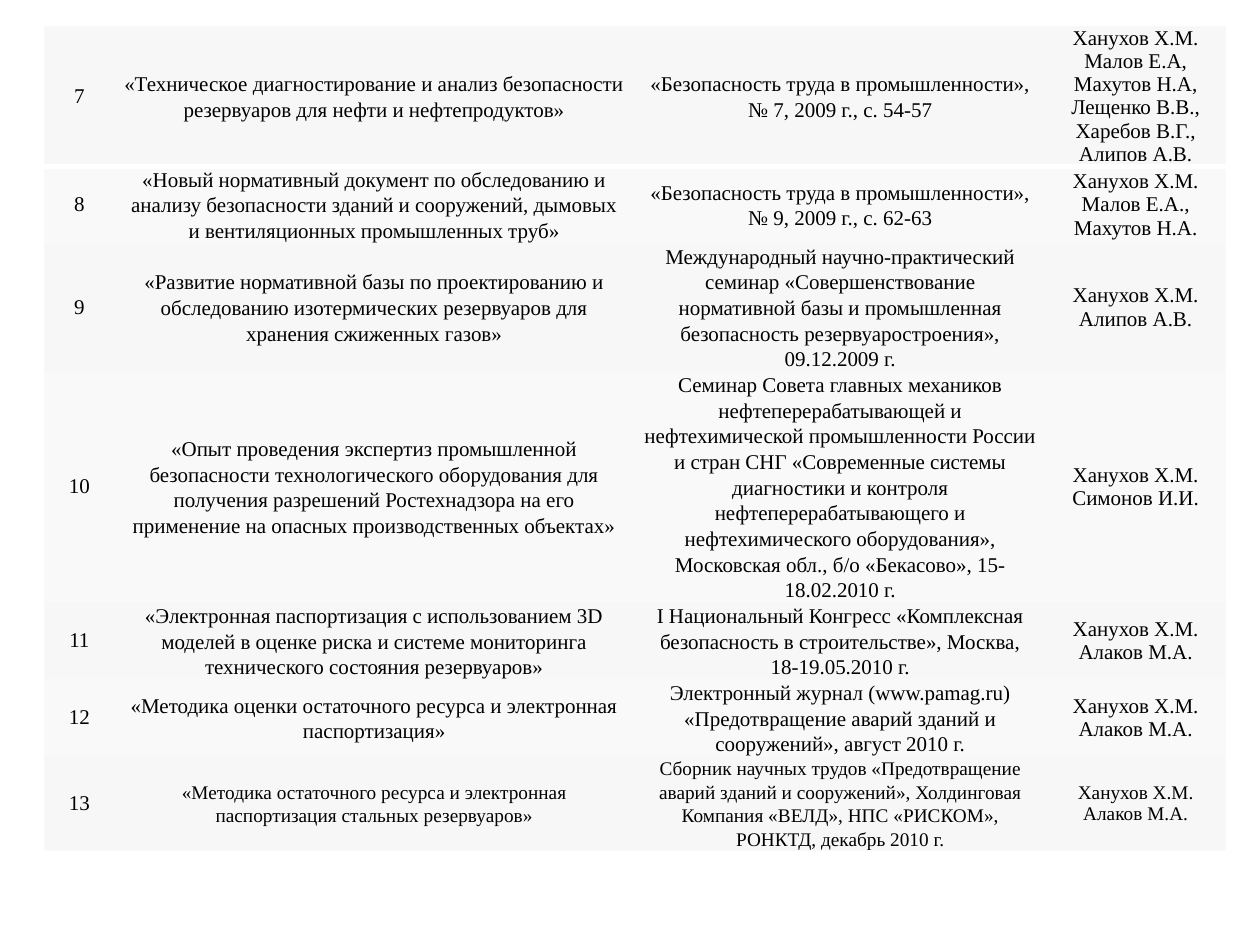
from lxml import etree
from pptx import Presentation
from pptx import util as u
from pptx.dml.color import RGBColor
from pptx.enum import text
from pptx.oxml.ns import qn

# Content: number, title, publication, authors
PUBLICATIONS = [
    ("7", "«Техническое диагностирование и анализ безопасности резервуаров для нефти и нефтепродуктов»",
     "«Безопасность труда в промышленности», № 7, 2009 г., с. 54-57",
     ["Ханухов Х.М.", "Малов Е.А,", "Махутов Н.А,", "Лещенко В.В.,", "Харебов В.Г.,", "Алипов А.В."]),
    ("8", "«Новый нормативный документ по обследованию и анализу безопасности зданий и сооружений, "
          "дымовых и вентиляционных промышленных труб»",
     "«Безопасность труда в промышленности», № 9, 2009 г., с. 62-63",
     ["Ханухов Х.М.", "Малов Е.А.,", "Махутов Н.А."]),
    ("9", "«Развитие нормативной базы по проектированию и обследованию изотермических резервуаров "
          "для хранения сжиженных газов»",
     "Международный научно-практический семинар «Совершенствование нормативной базы и промышленная "
     "безопасность резервуаростроения», 09.12.2009 г.",
     ["Ханухов Х.М.", "Алипов А.В."]),
    ("10", "«Опыт проведения экспертиз промышленной безопасности технологического оборудования для "
           "получения разрешений Ростехнадзора на его применение на опасных производственных объектах»",
     "Семинар Совета главных механиков нефтеперерабатывающей и нефтехимической промышленности России "
     "и стран СНГ «Современные системы диагностики и контроля нефтеперерабатывающего и "
     "нефтехимического оборудования», Московская обл., б/о «Бекасово», 15-18.02.2010 г.",
     ["Ханухов Х.М.", "Симонов И.И."]),
    ("11", "«Электронная паспортизация с использованием 3D моделей в оценке риска и системе "
           "мониторинга технического состояния резервуаров»",
     "I Национальный Конгресс «Комплексная безопасность в строительстве», Москва, 18-19.05.2010 г.",
     ["Ханухов Х.М.", "Алаков М.А."]),
    ("12", "«Методика оценки остаточного ресурса и электронная паспортизация»",
     "Электронный журнал (www.pamag.ru) «Предотвращение аварий зданий и сооружений», август 2010 г.",
     ["Ханухов Х.М.", "Алаков М.А."]),
    ("13", "«Методика остаточного ресурса и электронная паспортизация стальных резервуаров»",
     "Сборник научных трудов «Предотвращение аварий зданий и сооружений», Холдинговая Компания "
     "«ВЕЛД», НПС «РИСКОМ», РОНКТД, декабрь 2010 г.",
     ["Ханухов Х.М.", "Алаков М.А."]),
]
COLORS = {"text": "000000", "odd": "F7F7F7", "even": "F9F9F9", "edge": "F9F9F9", "rule": "FFFFFF"}
COLUMN_WIDTHS = [1.4, 10.49, 8.3, 3.61]
ROW_HEIGHT = 1.19
SIDE_MARGIN = 0.19
FONT = "Times New Roman"
PLAIN_STYLE = "{2D5ABB26-0587-4C30-8999-92F81FD0307C}"  # no style, no grid
LAST_ROW, LAST_COLUMN = len(PUBLICATIONS) - 1, len(COLUMN_WIDTHS) - 1


def add_border(cell, side, color, points):
    line = etree.SubElement(cell._tc.get_or_add_tcPr(), qn(f"a:ln{side}"), w=str(u.Pt(points)))
    fill = etree.SubElement(line, qn("a:solidFill"))
    etree.SubElement(fill, qn("a:srgbClr"), val=color)


def add_borders(cell, row, column):
    if column == 0:
        add_border(cell, "L", COLORS["edge"], 0.75)
    if column == LAST_COLUMN:
        add_border(cell, "R", COLORS["edge"], 0.75)
    if row == 0:
        add_border(cell, "T", COLORS["edge"], 0.75)
        add_border(cell, "B", COLORS["rule"], 3)
    if row == LAST_ROW:
        add_border(cell, "B", COLORS["edge"], 0.75)


def fill_cell(cell, content, row, column):
    cell.margin_left = cell.margin_right = u.Cm(SIDE_MARGIN)
    cell.margin_top = cell.margin_bottom = 0
    cell.vertical_anchor = text.MSO_ANCHOR.MIDDLE
    add_borders(cell, row, column)
    cell.fill.solid()
    cell.fill.fore_color.rgb = RGBColor.from_string(COLORS["even" if row % 2 else "odd"])
    cell.text_frame.text = "\n".join(content) if column == LAST_COLUMN else content
    for paragraph in cell.text_frame.paragraphs:
        paragraph.alignment = text.PP_ALIGN.CENTER
        if column in (1, 2):
            paragraph.line_spacing = 1.1
        paragraph.font.name = FONT
        paragraph.font.size = u.Pt(11 if row == LAST_ROW and column > 0 else 12)
        paragraph.font.color.rgb = RGBColor.from_string(COLORS["text"])


def main():
    presentation = Presentation()
    presentation.slide_width, presentation.slide_height = u.Cm(25.4), u.Cm(19.05)
    slide = presentation.slides.add_slide(presentation.slide_layouts[6])

    # Publications table; rows grow to fit their text
    frame = slide.shapes.add_table(len(PUBLICATIONS), len(COLUMN_WIDTHS), u.Cm(0.9), u.Cm(0.53),
                                   u.Cm(sum(COLUMN_WIDTHS)), u.Cm(ROW_HEIGHT * len(PUBLICATIONS)))
    table = frame.table
    table.first_row = table.horz_banding = False
    table._tbl.tblPr.find(qn("a:tableStyleId")).text = PLAIN_STYLE
    for column, width in zip(table.columns, COLUMN_WIDTHS):
        column.width = u.Cm(width)
    for row, publication in enumerate(PUBLICATIONS):
        for column, content in enumerate(publication):
            fill_cell(table.cell(row, column), content, row, column)
    frame.height = u.Cm(17.7)

    presentation.save("out.pptx")


if __name__ == "__main__":
    main()
